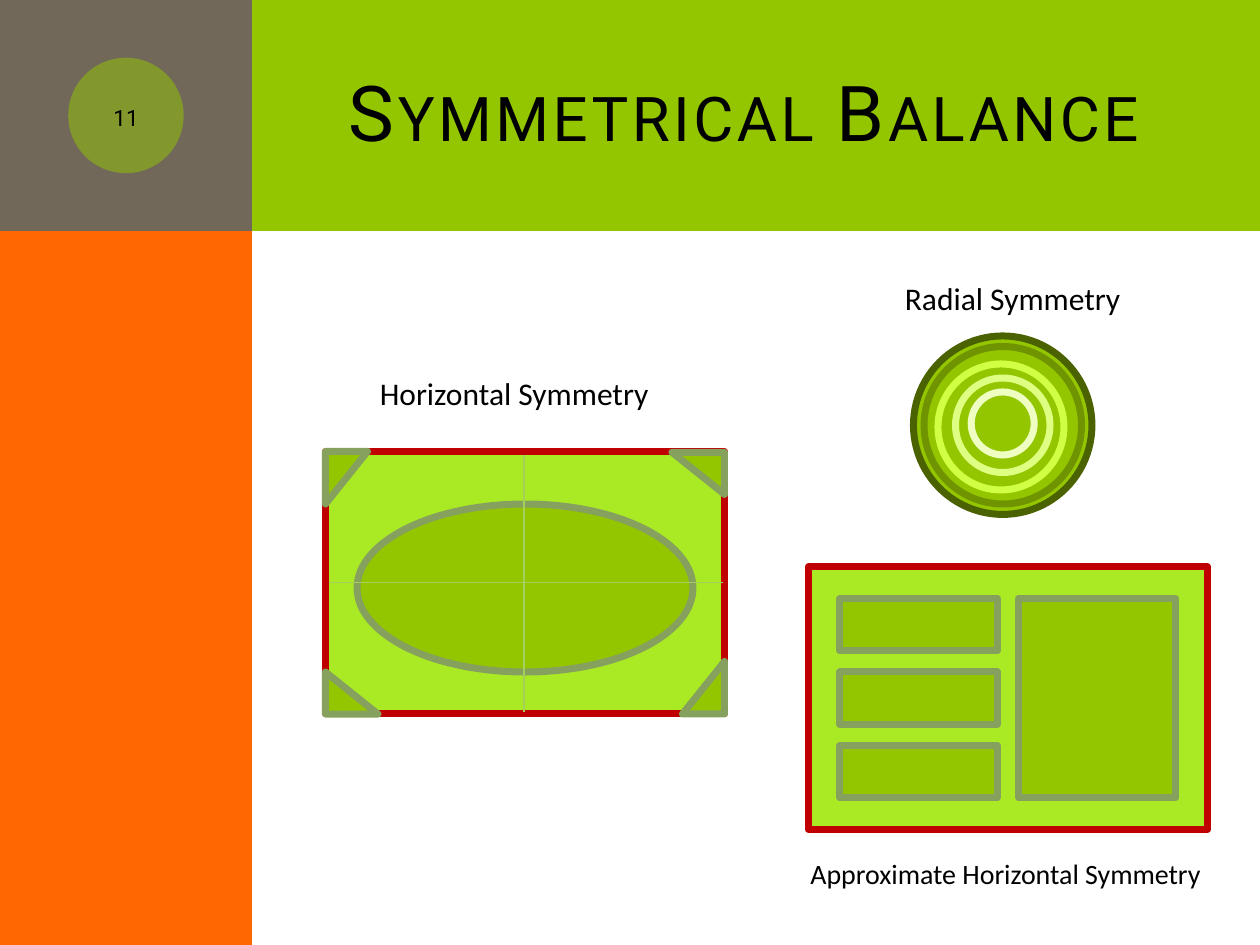
import pptx
import pptx.dml.color
import pptx.enum.dml
import pptx.enum.shapes
import pptx.enum.text
import pptx.oxml.xmlchemy
import pptx.oxml.ns
import pptx.util
from lxml import etree

Pt = pptx.util.Pt
Shape = pptx.enum.shapes.MSO_SHAPE
Align = pptx.enum.text.PP_ALIGN
Anchor = pptx.enum.text.MSO_ANCHOR
qn = pptx.oxml.ns.qn


class Theme:
    green, orange, taupe = "94C600", "FF6700", "71685A"
    light_green, red, sage, axis = "AAEA25", "C00000", "86A15E", "A4CF5B"
    rings = ("4A6300", "6F9400", "D0FF44", "DFFF82", "EFFFC1")
    text = "000000"
    heading_font, label_font = "Roboto", "Calibri"
    title_size, label_size, small_size = 44, 18, 16
    outline, hairline = 4, 0.75


def rgb(value):
    return pptx.dml.color.RGBColor.from_string(value)


def write_text(frame, text, size, font=Theme.label_font, align=Align.LEFT,
               anchor=Anchor.TOP, small_caps=False, spacing=0):
    frame.word_wrap = True
    frame.auto_size = pptx.enum.text.MSO_AUTO_SIZE.NONE
    frame.vertical_anchor = anchor
    para = frame.paragraphs[0]
    para.alignment = align
    span = para.add_run()
    span.text = text
    span.font.size = Pt(size)
    span.font.name = font
    span.font.color.rgb = rgb(Theme.text)
    properties = span.font._element
    if small_caps:
        properties.set("cap", "small")
    if spacing:
        properties.set("spc", str(spacing * 100))


class SlideBuilder:
    def __init__(self, page, theme):
        self.page = page
        self.theme = theme

    def group(self):
        return self.page.shapes.add_group_shape()

    def title(self, text, left, top, width, height):
        box = self.page.shapes.title
        box.left, box.top, box.width, box.height = map(Pt, (left, top, width, height))
        write_text(box.text_frame, text, self.theme.title_size,
                   font=self.theme.heading_font, align=Align.RIGHT,
                   anchor=Anchor.MIDDLE, small_caps=True, spacing=2)
        # Bring the title in front of the background panels
        self.page.shapes._spTree.append(box._element)

    def label(self, text, left, top, width, height, size, **text_format):
        box = self.page.shapes.add_textbox(*map(Pt, (left, top, width, height)))
        write_text(box.text_frame, text, size, **text_format)

    def shape(self, group, kind, left, top, width, height, fill,
              line=None, rotation=0, opacity=None):
        box = group.shapes.add_shape(kind, *map(Pt, (left, top, width, height)))
        box.shadow.inherit = False
        box.rotation = rotation
        box.fill.solid()
        box.fill.fore_color.rgb = rgb(fill)
        if opacity is not None:
            color = box._element.spPr.find(qn("a:solidFill"))[0]
            etree.SubElement(color, qn("a:alpha")).set("val", str(opacity * 1000))
        if line is None:
            box.line.fill.background()
        else:
            box.line.color.rgb = rgb(line)
            box.line.width = Pt(self.theme.outline)
            etree.SubElement(box._element.spPr.find(qn("a:ln")), qn("a:round"))

    def line(self, group, start_x, start_y, end_x, end_y, color):
        connector = group.shapes.add_connector(
            pptx.enum.shapes.MSO_CONNECTOR.STRAIGHT,
            *map(Pt, (start_x, start_y, end_x, end_y)))
        connector.line.color.rgb = rgb(color)
        connector.line.width = Pt(self.theme.hairline)
        etree.SubElement(connector._element.spPr, qn("a:effectLst"))


def main():
    deck = pptx.Presentation()
    deck.slide_width, deck.slide_height = Pt(720), Pt(540)
    page = deck.slides.add_slide(deck.slide_layouts[5])
    theme = Theme
    builder = SlideBuilder(page, theme)

    # Background panels and number badge
    panels = builder.group()
    builder.shape(panels, Shape.RECTANGLE, 36, 0, 684, 132, theme.green)
    builder.shape(panels, Shape.RECTANGLE, 0, 0, 144, 540, theme.orange)
    builder.shape(panels, Shape.RECTANGLE, 0, 0, 144, 132, theme.taupe)
    builder.shape(panels, Shape.OVAL, 39, 33, 66, 66, theme.green, opacity=50)

    # Title and captions
    builder.title("Symmetrical Balance", 192, 18, 492, 90)
    builder.label("Radial Symmetry", 510, 156, 150, 30, theme.label_size)
    builder.label("Horizontal Symmetry", 210, 210, 174, 29, theme.label_size)
    builder.label("Approximate Horizontal Symmetry", 456, 486, 240, 27, theme.small_size)

    # Approximate symmetry: three small blocks balance a large one
    blocks = builder.group()
    builder.shape(blocks, Shape.RECTANGLE, 462, 324, 228, 150, theme.light_green, theme.red)
    for row in range(3):
        builder.shape(blocks, Shape.RECTANGLE, 480, 342 + 42 * row, 90, 30,
                      theme.green, theme.sage)
    builder.shape(blocks, Shape.RECTANGLE, 582, 342, 90, 114, theme.green, theme.sage)

    # Horizontal symmetry: an oval, four corners and two axes
    mirror = builder.group()
    builder.shape(mirror, Shape.RECTANGLE, 186, 258, 228, 150, theme.light_green, theme.red)
    builder.shape(mirror, Shape.OVAL, 204, 288, 192, 96, theme.green, theme.sage)
    corners = ((183, 261, 90), (387, 381, 270), (384, 258.5, 180), (186, 384, 0))
    for left, top, rotation in corners:
        builder.shape(mirror, Shape.RIGHT_TRIANGLE, left, top, 30, 24,
                      theme.green, theme.sage, rotation=rotation)
    builder.line(mirror, 299.5, 260, 299.5, 407, theme.axis)
    builder.line(mirror, 188, 333, 413, 333, theme.axis)

    # Radial symmetry: nested rings, outermost first
    target = builder.group()
    places = ((522, 192, 102), (528, 198, 90), (536, 208, 72), (546, 216, 54), (555, 224, 36))
    for (left, top, size), color in zip(places, theme.rings):
        builder.shape(target, Shape.OVAL, left, top, size, size, theme.green, color)

    # Page number
    builder.label("11", 42, 42, 60, 48, theme.small_size, font=theme.heading_font,
                  align=Align.CENTER, anchor=Anchor.MIDDLE, small_caps=True)

    deck.save("out.pptx")


if __name__ == "__main__":
    main()
